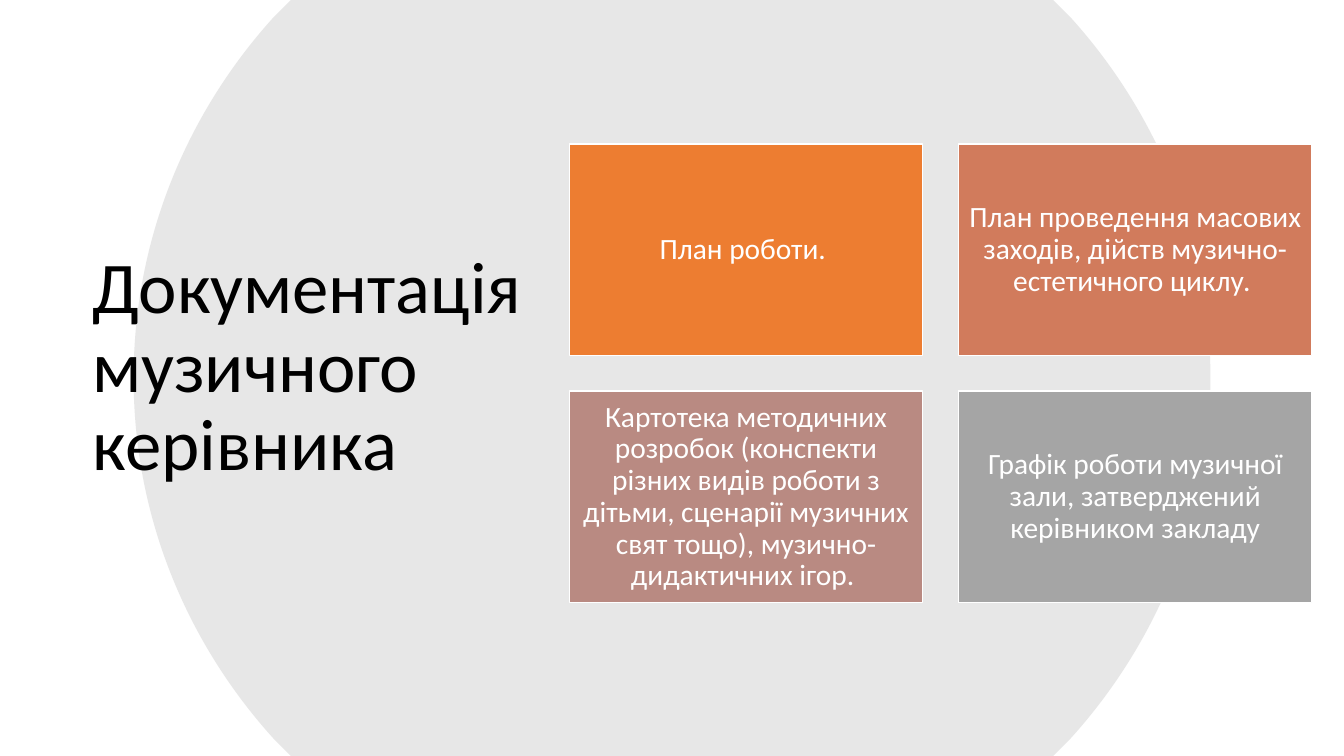
from dataclasses import dataclass

from lxml.etree import SubElement
from pptx import Presentation
from pptx.dml.color import RGBColor as Rgb
from pptx.enum.shapes import MSO_SHAPE as Kind
from pptx.enum.text import MSO_ANCHOR as Anchor, PP_ALIGN as Align
from pptx.oxml.ns import qn
from pptx.slide import Slide
from pptx.text.text import TextFrame
from pptx.util import Inches, Pt

COLORS = {
    "disc": "D9D9D9", "title": "000000", "white": "FFFFFF",
    "orange": "ED7D31", "coral": "D17B5C", "rose": "B98A82", "gray": "A5A5A5",
}
WIDTH, HEIGHT = 13.33, 7.5
LEFT, TOP = 5.65, 1.43
CARD_W, CARD_H = 3.5, 2.1
STEP_X, STEP_Y = 3.86, 2.45

# Disc outline as offsets from its centre; three points make a curve
MID_X, MID_Y = 6.665, 3.75
RIGHT = [
    [(3.78, -3.75)],
    [(3.95, -3.58)],
    [(4.81, -2.63), (5.34, -1.38), (5.34, 0)],
    [(5.34, 1.38), (4.81, 2.63), (3.95, 3.58)],
    [(3.78, 3.75)],
]


@dataclass
class Card:
    text: str
    color: str


CARDS = [
    Card("План роботи. ", "orange"),
    Card("План проведення масових заходів, дійств музично-естетичного циклу. ", "coral"),
    Card("Картотека методичних розробок (конспекти різних видів роботи з дітьми, "
         "сценарії музичних свят тощо), музично-дидактичних ігор. ", "rose"),
    Card("Графік роботи музичної зали, затверджений керівником закладу", "gray"),
]


def paint(name: str) -> Rgb:
    return Rgb.from_string(COLORS[name])


def write(frame: TextFrame, text: str, size: float, color: str, align: Align) -> None:
    frame.text = text
    frame.word_wrap = True
    frame.vertical_anchor = Anchor.MIDDLE
    line = frame.paragraphs[0]
    line.alignment = align
    line.line_spacing = 0.9
    font = line.runs[0].font
    font.name = "Calibri"
    font.size = Pt(size)
    font.color.rgb = paint(color)


def add_disc(slide: Slide) -> None:
    # The left half is the right half turned by 180 degrees
    turned = [[(-x, -y) for x, y in part] for part in RIGHT]
    parts = [[(Inches(MID_X + x), Inches(MID_Y + y)) for x, y in part]
             for part in RIGHT + turned]
    start, *rest = parts
    build = slide.shapes.build_freeform(*start[0])
    build.add_line_segments([part[-1] for part in rest], close=True)
    disc = build.convert_to_shape()
    disc.shadow.inherit = False
    disc.line.fill.background()
    disc.fill.solid()
    disc.fill.fore_color.rgb = paint("disc")
    tint = disc._element.spPr.find(qn("a:solidFill"))[0]
    SubElement(tint, qn("a:alpha"), val="62000")

    # Bend the long sides
    for side, part in zip(list(disc._element.iter(qn("a:lnTo"))), rest):
        if len(part) == 3:
            parent = side.getparent()
            curve = SubElement(parent, qn("a:cubicBezTo"))
            for x, y in part:
                SubElement(curve, qn("a:pt"), x=str(x - disc.left), y=str(y - disc.top))
            parent.replace(side, curve)


def add_title(slide: Slide) -> None:
    box = slide.shapes.add_textbox(Inches(0.82), Inches(0.61), Inches(5.32), Inches(6.09))
    write(box.text_frame, "Документація музичного керівника", 52, "title", Align.LEFT)


def add_card(slide: Slide, card: Card, row: int, col: int) -> None:
    box = slide.shapes.add_shape(
        Kind.RECTANGLE, Inches(LEFT + col * STEP_X), Inches(TOP + row * STEP_Y),
        Inches(CARD_W), Inches(CARD_H))
    box.shadow.inherit = False
    box.fill.solid()
    box.fill.fore_color.rgb = paint(card.color)
    box.line.color.rgb = paint("white")
    box.line.width = Pt(1)
    frame = box.text_frame
    frame.margin_left = frame.margin_right = Inches(0.09)
    frame.margin_top = frame.margin_bottom = Inches(0.09)
    write(frame, card.text, 21, "white", Align.CENTER)


def main() -> None:
    deck = Presentation()
    deck.slide_width, deck.slide_height = Inches(WIDTH), Inches(HEIGHT)
    slide = deck.slides.add_slide(deck.slide_layouts[6])

    # Backdrop and title
    add_disc(slide)
    add_title(slide)

    # Two by two grid of documents
    for i, card in enumerate(CARDS):
        add_card(slide, card, *divmod(i, 2))

    deck.save("out.pptx")


if __name__ == "__main__":
    main()
